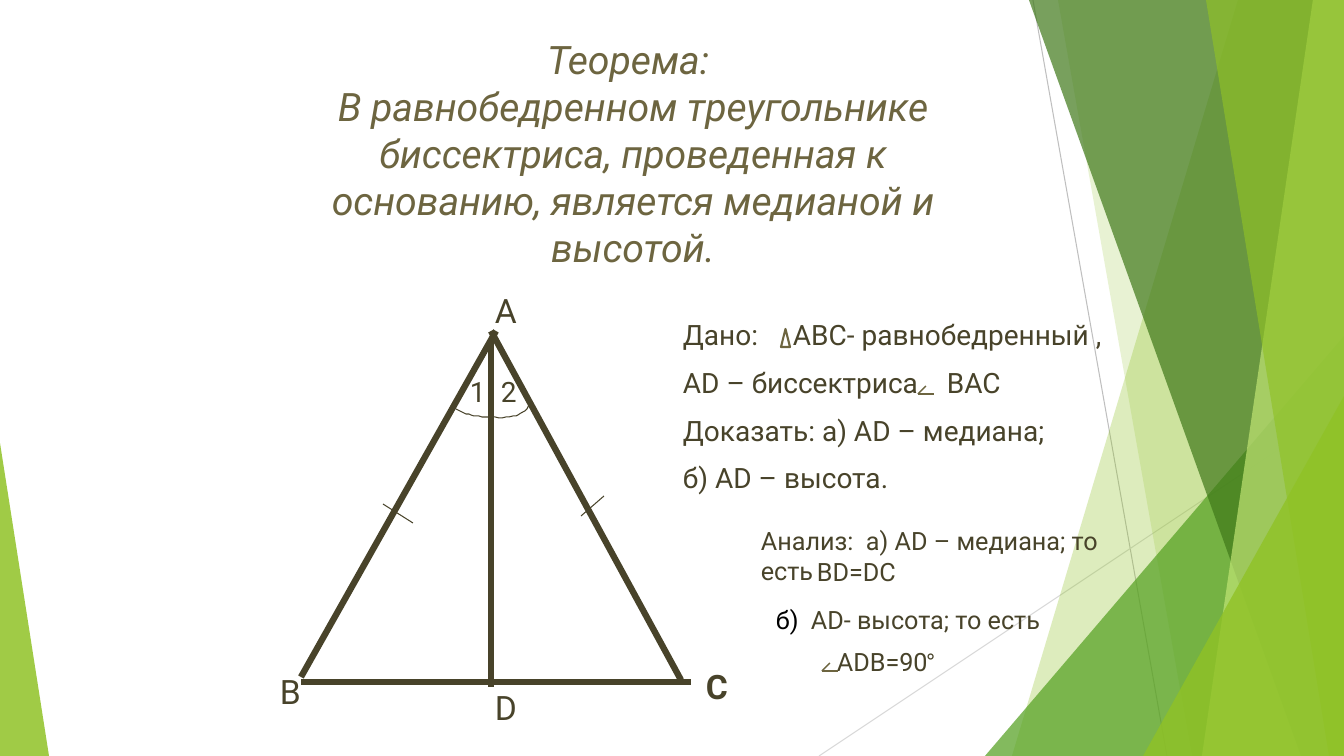
from lxml.etree import SubElement
from pptx import Presentation
from pptx.dml.color import RGBColor
from pptx.enum.shapes import MSO_CONNECTOR as CONNECTOR, MSO_SHAPE as SHAPE
from pptx.enum.text import MSO_ANCHOR as ANCHOR, PP_ALIGN as ALIGN
from pptx.oxml.ns import qn
from pptx.util import Pt

WIDTH, HEIGHT = 1344, 756
SCALE = 12192000 / WIDTH
COLORS = {
    "ink": "48432A", "olive": "6D6540", "black": "000000",
    "lime": "90C226", "green": "54A021", "forest": "3F7819", "pale": "C0E474",
    "gray": "BFBFBF", "light_gray": "D9D9D9",
}


def px(length):
    return round(length * SCALE)


def rgb(name):
    return RGBColor.from_string(COLORS[name])


def add_segment(slide, start, end, color="ink", weight=0.75):
    segment = slide.shapes.add_connector(
        CONNECTOR.STRAIGHT, *(px(value) for value in (*start, *end)))
    segment.line.color.rgb = rgb(color)
    segment.line.width = Pt(weight)
    SubElement(segment._element.spPr, qn("a:effectLst"))


def tint(facet, color, opacity):
    """Fill a facet with a see-through colour and remove its outline."""
    facet.shadow.inherit = False
    facet.fill.solid()
    facet.fill.fore_color.rgb = rgb(color)
    facet.line.fill.background()
    color_element = facet._element.spPr.find(qn("a:solidFill"))[0]
    SubElement(color_element, qn("a:alpha"), val=str(opacity * 1000))


def build_outline(slide, points, close):
    builder = slide.shapes.build_freeform(*points[0], scale=SCALE)
    builder.add_line_segments(points[1:], close=close)
    return builder.convert_to_shape()


def add_panel(slide, top_left, bottom_left, color, opacity):
    """Add a facet that reaches from a slanted left edge to the slide's right edge."""
    corners = [(top_left, 0), (WIDTH, 0), (WIDTH, HEIGHT), (bottom_left, HEIGHT)]
    tint(build_outline(slide, corners, True), color, opacity)


def add_triangle(slide, left, top, width, height, apex=0.5):
    triangle = slide.shapes.add_shape(
        SHAPE.ISOSCELES_TRIANGLE, px(left), px(top), px(width), px(height))
    triangle.adjustments[0] = apex
    triangle.shadow.inherit = False
    return triangle


def add_arc(slide, *controls, steps=16):
    """Draw a cubic curve through four control points."""
    points = []
    for step in range(steps + 1):
        t = step / steps
        weights = ((1 - t) ** 3, 3 * t * (1 - t) ** 2, 3 * t ** 2 * (1 - t), t ** 3)
        points.append(tuple(
            sum(weight * value for weight, value in zip(weights, axis))
            for axis in zip(*controls)))
    arc = build_outline(slide, points, False)
    arc.shadow.inherit = False
    arc.fill.background()
    arc.line.color.rgb = rgb("ink")
    arc.line.width = Pt(0.75)


def add_angle_sign(slide, left, bottom):
    add_segment(slide, (left + 8, bottom - 8), (left, bottom), "olive", 1)
    add_segment(slide, (left, bottom), (left + 16, bottom), "olive", 1)


def style(run, color="ink", **formats):
    for name, value in {"name": "Roboto", **formats}.items():
        setattr(run.font, name, value)
    run.font.color.rgb = rgb(color)


def add_run(paragraph, text, **formats):
    run = paragraph.add_run()
    run.text = text
    style(run, **formats)


def add_text(slide, box, lines, size, tabs=(), align=ALIGN.LEFT, **formats):
    """Add a text box; tabs holds one tab position, or None, per line."""
    frame = slide.shapes.add_textbox(*(px(value) for value in box)).text_frame
    for name, value in {"word_wrap": True, "vertical_anchor": ANCHOR.TOP}.items():
        setattr(frame, name, value)
    for index, line in enumerate(lines):
        paragraph = frame.add_paragraph() if index else frame.paragraphs[0]
        paragraph.text = line
        paragraph.alignment = align
        if index:
            paragraph.space_before = Pt(10)
        if index < len(tabs) and tabs[index]:
            stops = SubElement(paragraph._p.get_or_add_pPr(), qn("a:tabLst"))
            SubElement(stops, qn("a:tab"), pos=str(px(tabs[index])), algn="l")
        for run in paragraph.runs:
            style(run, size=Pt(size), **formats)
    return frame


def add_backdrop(slide):
    add_segment(slide, (1033, 0), (1167, HEIGHT), "gray")
    add_segment(slide, (WIDTH, 406), (819, HEIGHT), "light_gray")
    add_panel(slide, 1238, 1012, "lime", 30)
    add_panel(slide, 1058, 1192, "lime", 20)
    tint(add_triangle(slide, 985, 336, 359, 420, 1), "green", 72)
    add_panel(slide, 1029, 1301, "forest", 70)
    add_panel(slide, 1313, 1202, "pale", 70)
    add_panel(slide, 1206, 1329, "lime", 65)
    tint(add_triangle(slide, 1143, 396, 201, 360, 1), "lime", 80)
    tint(add_triangle(slide, 0, 443, 49, 313, 0), "lime", 85)


def add_drawing(slide):
    sides = [((496, 331), (301, 677)), ((491, 331), (681, 680)),
             ((301, 682), (691, 682)), ((491, 339), (491, 687))]
    for start, end in sides:
        add_segment(slide, start, end, weight=4.5)
    for start, end in [((383, 504), (413, 523)), ((581, 516), (604, 496))]:
        add_segment(slide, start, end)
    add_arc(slide, (491, 417), (475, 417), (461, 414), (452, 406))
    add_arc(slide, (491, 417), (512, 420), (530, 413), (530, 401))
    vertices = [("В", 270, 666, False), ("А", 485, 285, False),
                ("D", 485, 682, False), ("С", 696, 661, True)]
    for letter, left, top, bold in vertices:
        add_text(slide, (left, top, 60, 50), [letter], 24, bold=bold)
    for number, left in [("1", 460), ("2", 491)]:
        add_text(slide, (left, 370, 44, 44), [number], 20)


def add_proof(slide):
    add_text(slide, (673, 313, 449, 197), [
        "Дано:\tАВС- равнобедренный ,",
        "АD – биссектриса\tBAC",
        "Доказать: а) АD – медиана;",
        "б) АD – высота.",
    ], 20, tabs=(110, 264))
    add_text(slide, (751, 520, 382, 40), ["Анализ:\tа) АD – медиана; то есть"],
             18, tabs=(105,))
    add_text(slide, (807, 551, 263, 40), ["ВD=DC"], 18)
    height_claim = add_text(slide, (766, 599, 355, 40), ["б)"], 18,
                            tabs=(35,), color="black")
    add_run(height_claim.paragraphs[0], "\tАD- высота; то есть", size=Pt(18))
    right_angle = add_text(slide, (827, 641, 264, 40), ["ADB=90"], 18)
    add_run(right_angle.paragraphs[0], "°", size=Pt(18), name="Comic Neue")
    add_angle_sign(slide, 822, 671)
    add_angle_sign(slide, 918, 394)
    triangle_sign = add_triangle(slide, 781, 329, 9, 18)
    triangle_sign.fill.background()
    triangle_sign.line.color.rgb = rgb("olive")
    triangle_sign.line.width = Pt(1.5)


def main():
    deck = Presentation()
    deck.slide_width, deck.slide_height = px(WIDTH), px(HEIGHT)
    slide = deck.slides.add_slide(deck.slide_layouts[6])
    add_backdrop(slide)
    theorem = ("Теорема: \vВ равнобедренном треугольнике биссектриса, "
               "проведенная к основанию, является медианой и высотой.")
    add_text(slide, (286, 30, 694, 182), [theorem], 28,
             align=ALIGN.CENTER, color="olive", italic=True)
    add_drawing(slide)
    add_proof(slide)
    deck.save("out.pptx")


if __name__ == "__main__":
    main()
